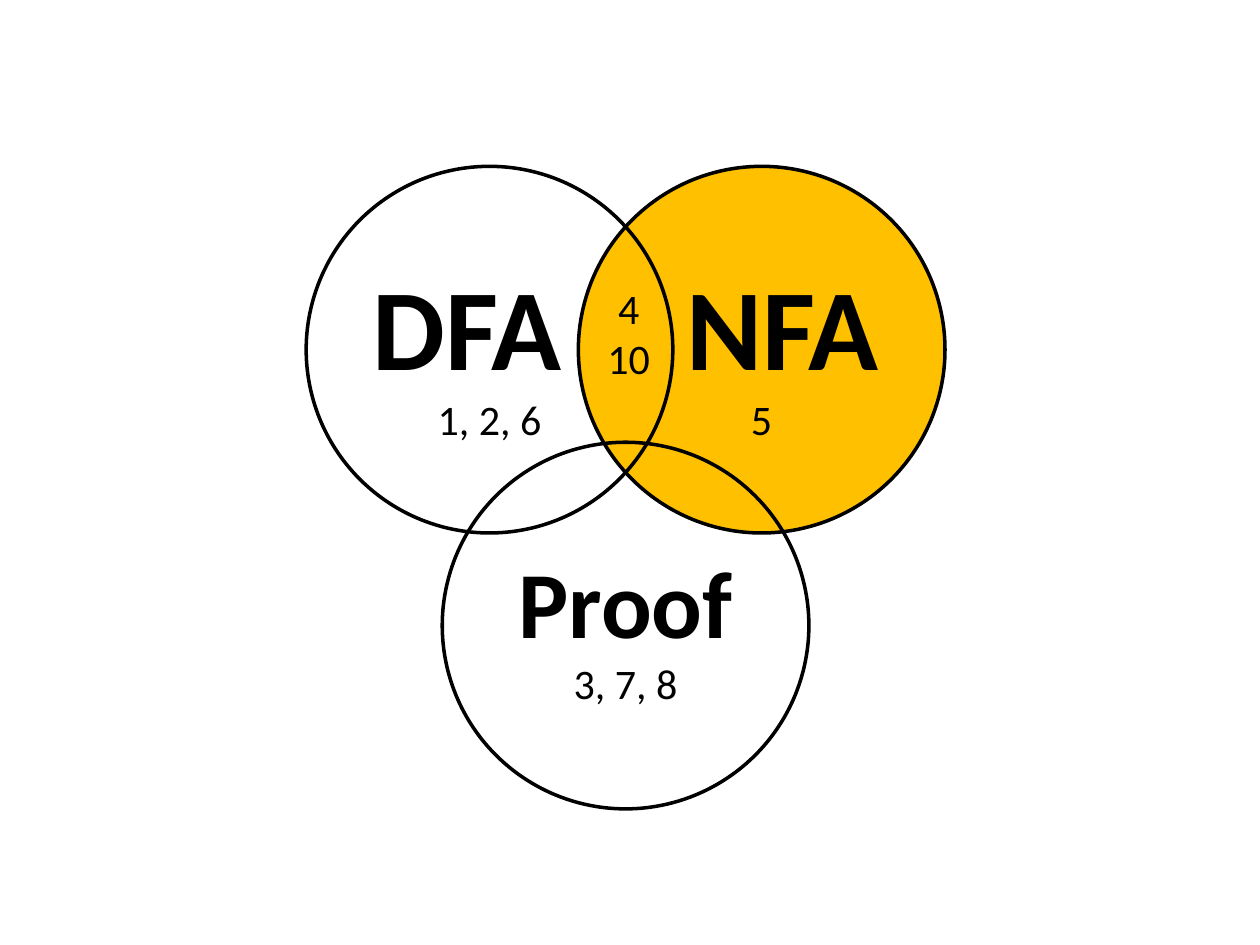
from dataclasses import dataclass

from pptx import Presentation
from pptx.dml.color import RGBColor
from pptx.enum.shapes import MSO_SHAPE
from pptx.enum.text import MSO_ANCHOR, MSO_AUTO_SIZE, PP_ALIGN
from pptx.util import Inches, Pt

ELLIPSE = MSO_SHAPE.OVAL
MIDDLE = MSO_ANCHOR.MIDDLE
FIT_SHAPE = MSO_AUTO_SIZE.SHAPE_TO_FIT_TEXT
LEFT, CENTER, RIGHT = PP_ALIGN.LEFT, PP_ALIGN.CENTER, PP_ALIGN.RIGHT


@dataclass(frozen=True)
class Theme:
    font: str = "Calibri"
    ink: RGBColor = RGBColor(0x00, 0x00, 0x00)
    highlight: RGBColor = RGBColor(0xFF, 0xC0, 0x00)
    outline: Pt = Pt(2)
    large: Pt = Pt(66)
    medium: Pt = Pt(54)
    small: Pt = Pt(24)


theme = Theme()


def add_span(para, text, size, bold=False):
    span = para.add_run()
    span.text = text
    span.font.name = theme.font
    span.font.size = size
    span.font.bold = bold
    span.font.color.rgb = theme.ink


deck = Presentation()
deck.slide_width, deck.slide_height = Inches(10), Inches(7.5)
page = deck.slides.add_slide(deck.slide_layouts[6])
venn = page.shapes.add_group_shape()

# Proof sits midway between DFA and NFA, one step lower.
diameter = Inches(2.91)
left, top = Inches(2.43), Inches(1.32)
step_across, step_down = Inches(1.08), Inches(2.19)

# Columns and rows count steps; back to front.
circles = [
    ("NFA", "5", 2, 0, theme.large, RIGHT, theme.highlight),
    ("Proof", "3, 7, 8", 1, 1, theme.medium, CENTER, None),
    ("DFA", "1, 2, 6", 0, 0, theme.large, LEFT, None),
]
for name, questions, column, row, size, align, fill in circles:
    circle = venn.shapes.add_shape(
        ELLIPSE, left + column * step_across, top + row * step_down,
        diameter, diameter)
    circle.shadow.inherit = False
    if fill is None:
        circle.fill.background()
    else:
        circle.fill.solid()
        circle.fill.fore_color.rgb = fill
    circle.line.color.rgb = theme.ink
    circle.line.width = theme.outline

    frame = circle.text_frame
    frame.word_wrap = True
    frame.vertical_anchor = MIDDLE
    title = frame.paragraphs[0]
    title.alignment = align
    add_span(title, name, size, bold=True)
    detail = frame.add_paragraph()
    detail.alignment = CENTER
    add_span(detail, questions, theme.small)

# Questions shared by DFA and NFA
shared = venn.shapes.add_textbox(
    Inches(4.72), Inches(2.19), Inches(0.54), Inches(0.91))
shared.text_frame.word_wrap = False
shared.text_frame.auto_size = FIT_SHAPE
para = shared.text_frame.paragraphs[0]
para.alignment = CENTER
add_span(para, "4", theme.small)
para.add_line_break()
add_span(para, "10", theme.small)

deck.save("out.pptx")
